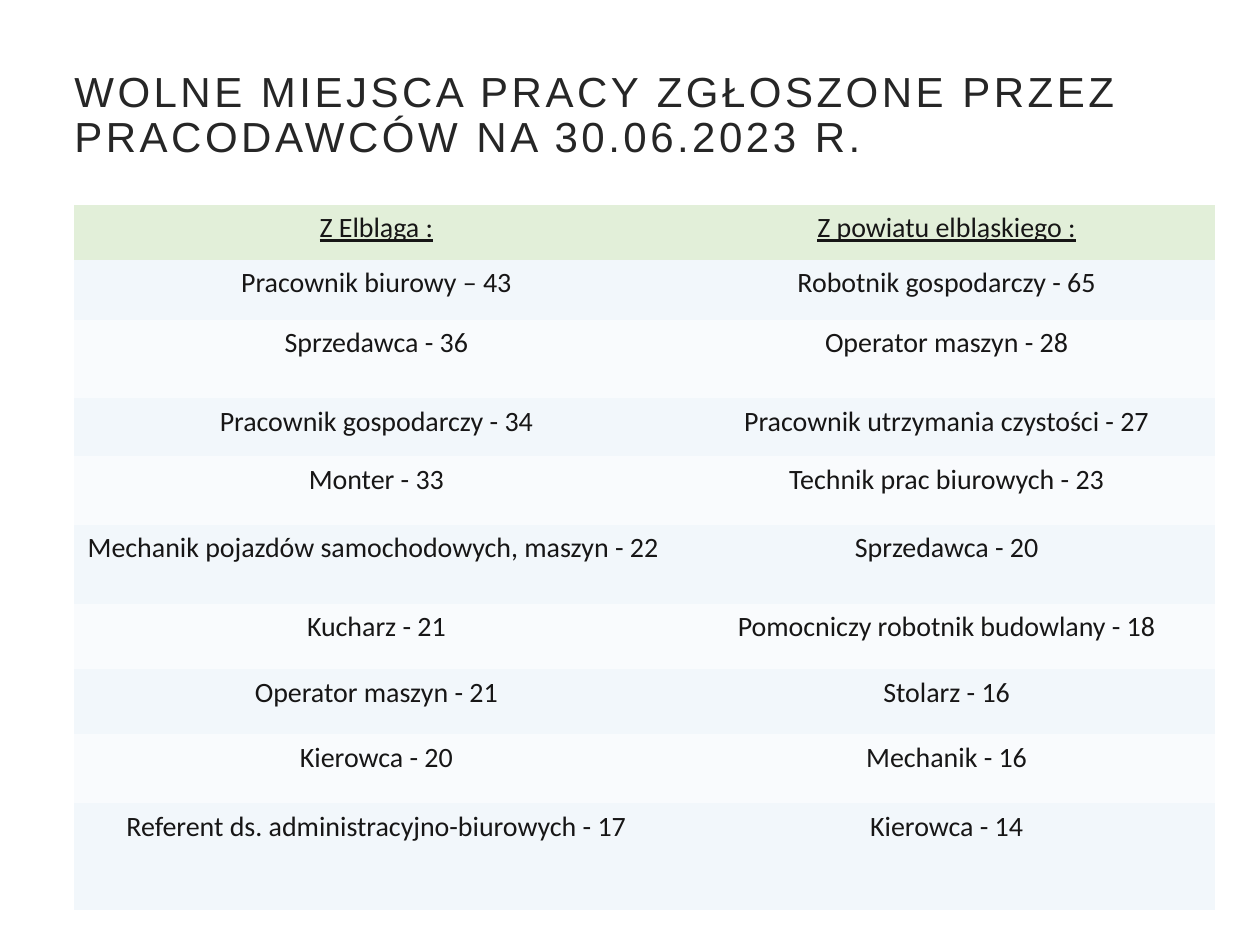
from lxml.etree import SubElement as Sub
from pptx import Presentation
from pptx.dml.color import RGBColor as RGB
from pptx.enum.text import MSO_ANCHOR as Anchor, MSO_AUTO_SIZE as Fit, PP_ALIGN as Align
from pptx.oxml.ns import qn
from pptx.util import Pt

INK = RGB(0x26, 0x26, 0x26)
TEXT = RGB(0x17, 0x16, 0x16)
GREEN = RGB(0xE2, 0xEF, 0xD9)
BANDS = RGB(0xF9, 0xFB, 0xFD), RGB(0xF2, 0xF7, 0xFB)

TITLE = "WOLNE MIEJSCA PRACY ZGŁOSZONE PRZEZ PRACODAWCÓW NA 30.06.2023 R."
COLS = 345.4, 306.3
# Row height, city offer, county offer
ROWS = [
    (31.5, "Z Elbląga :", "Z powiatu elbląskiego :"),
    (34.3, "Pracownik biurowy – 43", "Robotnik gospodarczy - 65"),
    (45, "Sprzedawca - 36", "Operator maszyn - 28"),
    (33, "Pracownik gospodarczy - 34", "Pracownik utrzymania czystości - 27"),
    (39.3, "Monter - 33", "Technik prac biurowych - 23"),
    (45, "Mechanik pojazdów samochodowych, maszyn - 22 ", "Sprzedawca - 20"),
    (37.5, "Kucharz - 21", "Pomocniczy robotnik budowlany - 18"),
    (37.3, "Operator maszyn - 21", "Stolarz - 16"),
    (39.3, "Kierowca - 20", "Mechanik - 16"),
    (60.8, "Referent ds. administracyjno-biurowych - 17", "Kierowca - 14"),
]


def format(item, values):
    for name, value in values.items():
        setattr(item, name, value)


def style(run, color, **font):
    format(run.font, font)
    run.font.color.rgb = color


def add_title(slide):
    title = slide.shapes.title
    format(title, dict(left=Pt(14.4), top=Pt(21), width=Pt(686), height=Pt(90.6)))
    frame = title.text_frame
    inset = Pt(14.4)
    format(frame, dict(
        text=TITLE, word_wrap=True, auto_size=Fit.NONE, vertical_anchor=Anchor.MIDDLE,
        margin_left=inset, margin_right=inset, margin_top=inset, margin_bottom=inset))
    para = frame.paragraphs[0]
    format(para, dict(alignment=Align.LEFT, line_spacing=0.9))
    # Indent and letter spacing
    props = para._p.get_or_add_pPr()
    props.set("marL", str(int(Pt(13.7))))
    props.set("indent", "0")
    run = para.runs[0]
    style(run, INK, name="Arial", size=Pt(24))
    run._r.get_or_add_rPr().set("spc", "200")


def clear_edges(cell):
    props = cell._tc.get_or_add_tcPr()
    for side in ("a:lnL", "a:lnR", "a:lnT", "a:lnB"):
        Sub(Sub(props, qn(side)), qn("a:noFill"))


def fill_cell(cell, text, color, under):
    clear_edges(cell)
    cell.fill.solid()
    cell.fill.fore_color.rgb = color
    cell.text = text
    para = cell.text_frame.paragraphs[0]
    para.alignment = Align.CENTER
    style(para.runs[0], TEXT, name="Calibri", size=Pt(16), bold=False, underline=under)


def add_jobs(slide):
    high = sum(row[0] for row in ROWS)
    frame = slide.shapes.add_table(
        len(ROWS), len(COLS), Pt(42.4), Pt(116.9), Pt(sum(COLS)), Pt(high))
    table = frame.table
    for col, width in zip(table.columns, COLS):
        col.width = Pt(width)
    for r, (height, *texts) in enumerate(ROWS):
        table.rows[r].height = Pt(height)
        head = r == 0
        for c, text in enumerate(texts):
            fill_cell(table.cell(r, c), text, GREEN if head else BANDS[r % 2], head)


def main():
    deck = Presentation()
    format(deck, dict(slide_width=Pt(720), slide_height=Pt(540)))
    slide = deck.slides.add_slide(deck.slide_layouts[5])  # title only
    add_title(slide)
    add_jobs(slide)
    deck.save("out.pptx")


if __name__ == "__main__":
    main()
